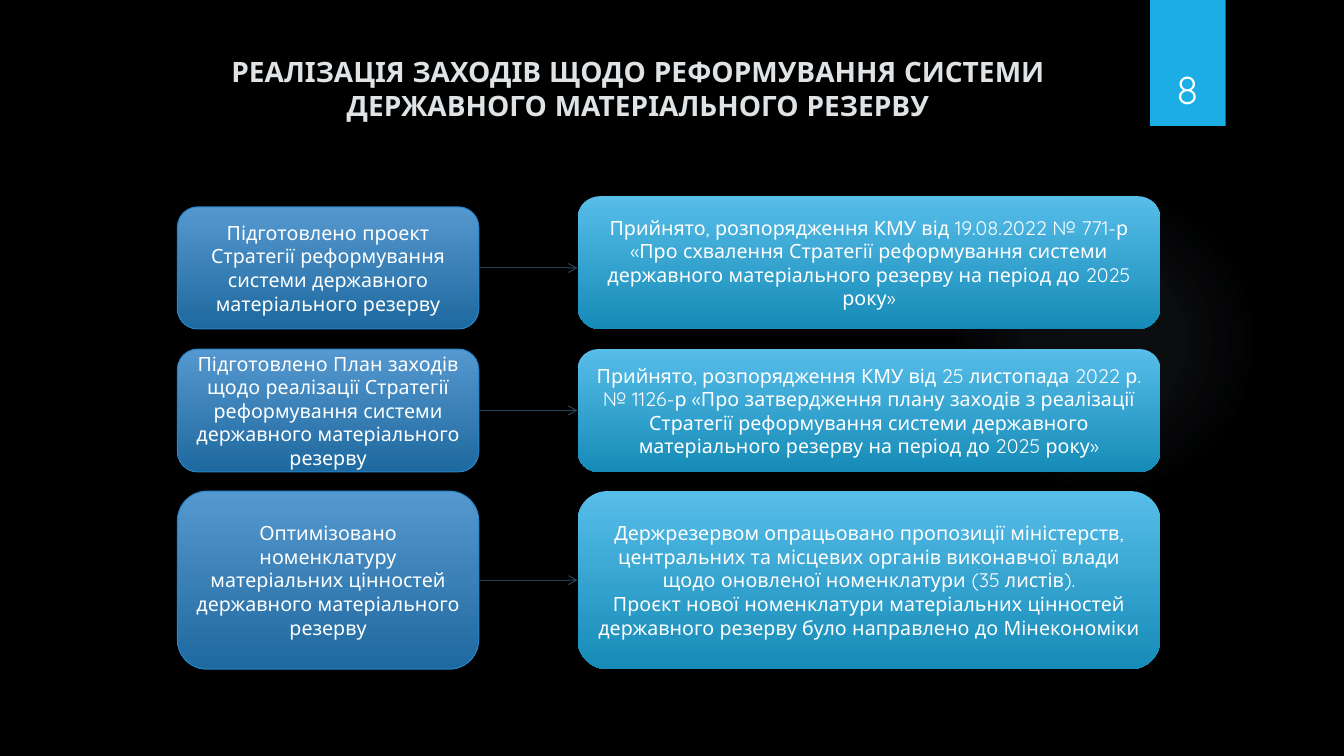
from dataclasses import dataclass

from pptx import Presentation
from pptx.dml.color import RGBColor
from pptx.enum.shapes import MSO_CONNECTOR, MSO_SHAPE
from pptx.enum.text import MSO_ANCHOR, PP_ALIGN
from pptx.oxml import parse_xml
from pptx.oxml.ns import nsdecls
from pptx.shapes.autoshape import Shape
from pptx.slide import Slide
from pptx.util import Pt

FONT = "Quicksand"
BLACK = RGBColor(0x00, 0x00, 0x00)
WHITE = RGBColor(0xFF, 0xFF, 0xFF)
TITLE_GREY = RGBColor(0xDF, 0xE3, 0xE5)
BADGE_BLUE = RGBColor(0x1C, 0xAD, 0xE4)
ARROW_BLUE = RGBColor(0x26, 0x44, 0x57)
OUTLINE_BLUE = RGBColor(0x26, 0x83, 0xC6)
TASK_GRADIENT = (RGBColor(0x55, 0x98, 0xCF), RGBColor(0x1E, 0x69, 0x9F))
RESULT_GRADIENT = (RGBColor(0x57, 0xBD, 0xE9), RGBColor(0x16, 0x8B, 0xB7))
GLOW_BLUE = RGBColor(0xA0, 0xC1, 0xD5)
GLOW_STOPS = ((0, 7), (36, 6), (69, 0))  # position and opacity, percent

TASK_LEFT, TASK_WIDTH = 126.7, 215.3
RESULT_LEFT, RESULT_WIDTH = 412.6, 416.2


@dataclass(frozen=True)
class Measure:
    task: str
    results: tuple[str, ...]
    top: float
    height: float
    result_rise: float = 0  # how far the result box starts above the task
    result_extra: float = 0  # how much taller the result box is


MEASURES = (
    Measure(
        "Підготовлено проект Стратегії реформування системи державного матеріального резерву",
        ("Прийнято, розпорядження КМУ від 19.08.2022 № 771-р",
         "«Про схвалення Стратегії реформування системи державного матеріального "
         "резерву на період до 2025 року»"),
        147.8, 87.2, result_rise=7.6, result_extra=7.6),
    Measure(
        "Підготовлено План заходів щодо реалізації Стратегії реформування системи "
        "державного матеріального резерву",
        ("Прийнято, розпорядження КМУ від 25 листопада 2022 р. № 1126-р «Про "
         "затвердження плану заходів з реалізації Стратегії реформування системи "
         "державного матеріального резерву на період до 2025 року»",),
        249.3, 87.8),
    Measure(
        "Оптимізовано номенклатуру матеріальних цінностей державного матеріального резерву",
        ("Держрезервом опрацьовано пропозиції міністерств, центральних та місцевих "
         "органів виконавчої влади щодо оновленої номенклатури (35 листів).",
         "Проєкт нової номенклатури матеріальних цінностей державного резерву було "
         "направлено до Мінекономіки"),
        350.8, 127.2),
)


def write_text(shape: Shape, *paragraphs: str, size: float = 14,
               color: RGBColor = WHITE, bold: bool = False,
               anchor: MSO_ANCHOR = MSO_ANCHOR.MIDDLE,
               line_spacing: float = 1.0) -> None:
    frame = shape.text_frame
    frame.word_wrap = True
    frame.vertical_anchor = anchor
    frame.text = "\n".join(paragraphs)
    for paragraph in frame.paragraphs:
        paragraph.alignment = PP_ALIGN.CENTER
        paragraph.line_spacing = line_spacing
        font = paragraph.font
        font.name, font.size, font.bold = FONT, Pt(size), bold
        font.color.rgb = color


def add_plain_shape(slide: Slide, kind: MSO_SHAPE, left: float, top: float,
                    width: float, height: float) -> Shape:
    """Add a shape without outline or shadow."""
    shape = slide.shapes.add_shape(kind, Pt(left), Pt(top), Pt(width), Pt(height))
    shape.shadow.inherit = False
    shape.line.fill.background()
    return shape


def add_gradient_box(slide: Slide, left: float, top: float, width: float,
                     height: float, colors: tuple[RGBColor, RGBColor]) -> Shape:
    box = add_plain_shape(slide, MSO_SHAPE.ROUNDED_RECTANGLE, left, top, width, height)
    box.fill.gradient()
    box.fill.gradient_angle = 270
    for position, (stop, color) in enumerate(zip(box.fill.gradient_stops, colors)):
        stop.position = position
        stop.color.rgb = color
    return box


def add_arrow(slide: Slide, task: Shape, result: Shape) -> None:
    """Draw a level arrow from the task to the result, joined at side middles."""
    middle = task.top + task.height // 2
    arrow = slide.shapes.add_connector(
        MSO_CONNECTOR.STRAIGHT, task.left + task.width, middle, result.left, middle)
    arrow.begin_connect(task, 3)
    if result.top + result.height // 2 == middle:
        arrow.end_connect(result, 1)
    arrow.line.color.rgb = ARROW_BLUE
    arrow.line.width = Pt(0.75)
    arrow.line._get_or_add_ln().append(
        parse_xml(f'<a:tailEnd {nsdecls("a")} type="arrow"/>'))
    arrow._element.spPr.append(parse_xml(f'<a:effectLst {nsdecls("a")}/>'))


def add_glow(slide: Slide) -> None:
    glow = add_plain_shape(slide, MSO_SHAPE.OVAL, 677.5, 131.8, 221.8, 221.8)
    stops = "".join(
        f'<a:gs pos="{position * 1000}"><a:srgbClr val="{GLOW_BLUE}">'
        f'<a:alpha val="{opacity * 1000}"/></a:srgbClr></a:gs>'
        for position, opacity in GLOW_STOPS)
    glow._element.spPr.insert(2, parse_xml(
        f'<a:gradFill {nsdecls("a")}><a:gsLst>{stops}</a:gsLst><a:path path="circle">'
        '<a:fillToRect l="50000" t="50000" r="50000" b="50000"/></a:path></a:gradFill>'))


def add_badge(slide: Slide) -> None:
    badge = add_plain_shape(slide, MSO_SHAPE.RECTANGLE, 821.5, 0, 54, 90)
    badge.fill.solid()
    badge.fill.fore_color.rgb = BADGE_BLUE


def add_text_box(slide: Slide, left: float, top: float, width: float,
                 height: float) -> Shape:
    return slide.shapes.add_textbox(Pt(left), Pt(top), Pt(width), Pt(height))


def add_measure(slide: Slide, measure: Measure) -> None:
    task = add_gradient_box(slide, TASK_LEFT, measure.top, TASK_WIDTH,
                            measure.height, TASK_GRADIENT)
    task.line.color.rgb = OUTLINE_BLUE
    task.line.width = Pt(0.75)
    write_text(task, measure.task)
    result = add_gradient_box(
        slide, RESULT_LEFT, measure.top - measure.result_rise, RESULT_WIDTH,
        measure.height + measure.result_extra, RESULT_GRADIENT)
    write_text(result, *measure.results)
    add_arrow(slide, task, result)


def main() -> None:
    presentation = Presentation()
    presentation.slide_width, presentation.slide_height = Pt(960), Pt(540)
    slide = presentation.slides.add_slide(presentation.slide_layouts[6])
    slide.background.fill.solid()
    slide.background.fill.fore_color.rgb = BLACK
    add_glow(slide)
    add_badge(slide)
    write_text(add_text_box(slide, 88.4, 35.4, 734.4, 67),
               "РЕАЛІЗАЦІЯ ЗАХОДІВ ЩОДО РЕФОРМУВАННЯ СИСТЕМИ "
               "ДЕРЖАВНОГО МАТЕРІАЛЬНОГО РЕЗЕРВУ",
               size=20, color=TITLE_GREY, bold=True, anchor=MSO_ANCHOR.TOP)
    for measure in MEASURES:
        add_measure(slide, measure)
    write_text(add_text_box(slide, 815, 23, 66.2, 60.5), "8",
               size=28, anchor=MSO_ANCHOR.BOTTOM)
    presentation.save("out.pptx")


if __name__ == "__main__":
    main()
